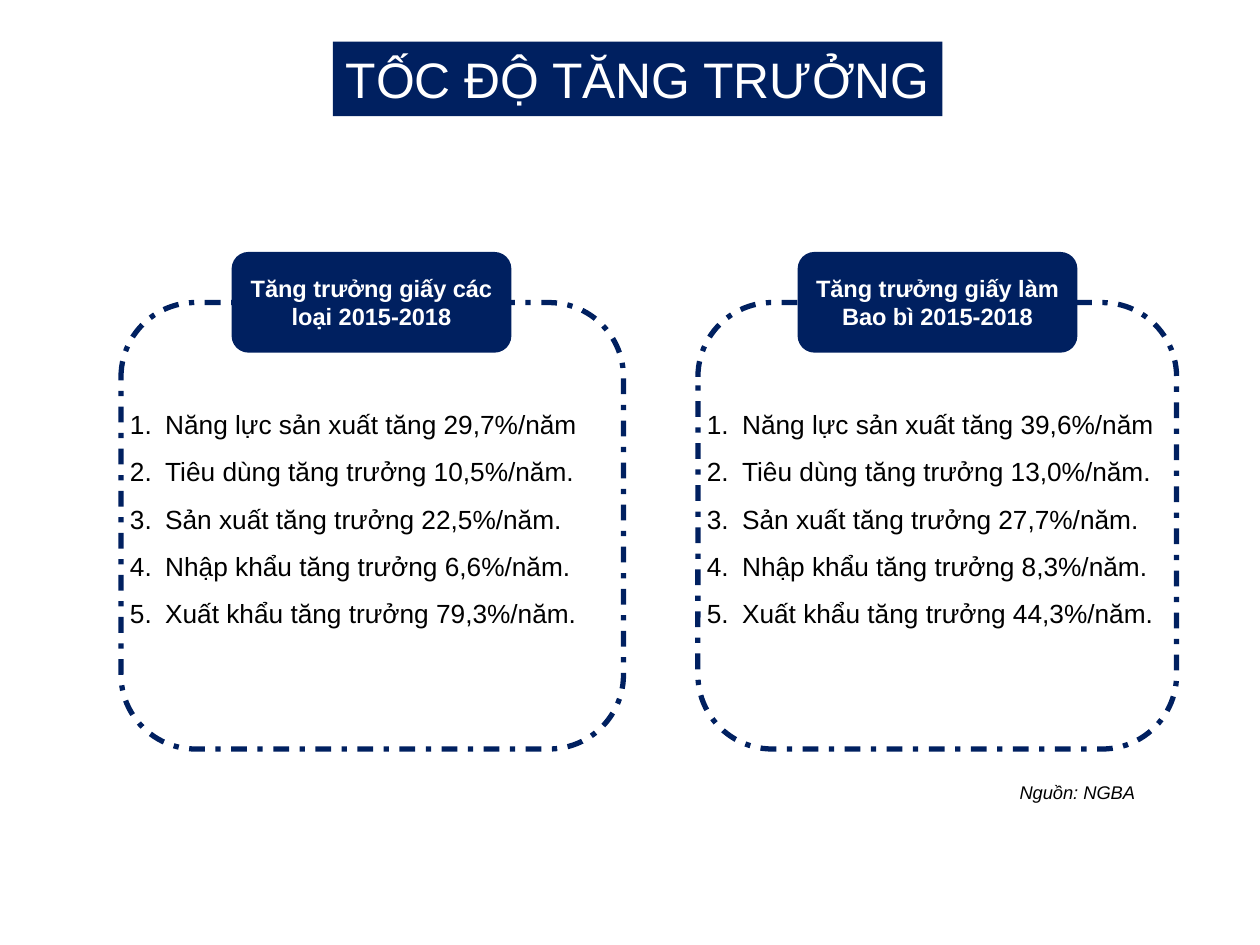
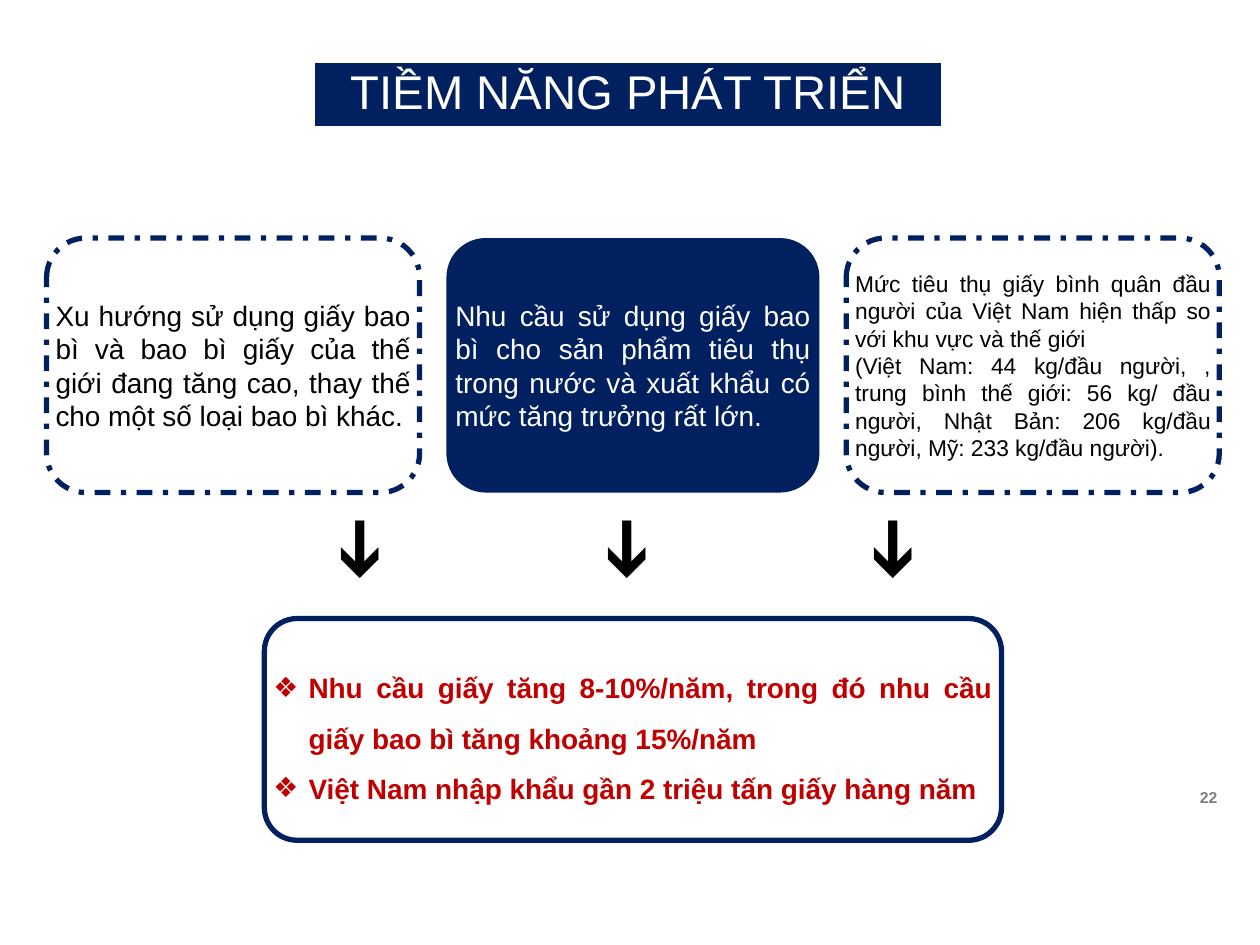
import pptx
import pptx.dml.color
import pptx.enum.shapes
import pptx.enum.text
import pptx.oxml
import pptx.util
from pptx.oxml.ns import nsdecls

Cm = pptx.util.Cm
Pt = pptx.util.Pt
Align = pptx.enum.text.PP_ALIGN
Anchor = pptx.enum.text.MSO_ANCHOR

NAVY, WHITE, BLACK, RED, GRAY = "002060", "FFFFFF", "000000", "C00000", "7F7F7F"
INDENT = Cm(0.71)
NUMBER = '<a:buAutoNum {} type="arabicPeriod"/>'
DIAMOND = '<a:buChar {} char="❖"/>'
DASHES = ('<a:custDash {}><a:ds d="300000" sp="200000"/>'
          '<a:ds d="100000" sp="200000"/></a:custDash>')


def color(code):
    return pptx.dml.color.RGBColor.from_string(code)


def xml(text):
    return pptx.oxml.parse_xml(text.format(nsdecls("a")))


def apply(target, values):
    for name, value in values.items():
        setattr(target, name, value)


def place(shape, box):
    names = ("left", "top", "width", "height")
    apply(shape, dict(zip(names, map(Cm, box))))


def write(shape, lines, size, ink, align=Align.LEFT, anchor=Anchor.MIDDLE,
          pad=(0.18, 0.1), space=1.0, bold=False, italic=False):
    """Fill the text frame, one paragraph for each line."""
    frame = shape.text_frame
    side, end = map(Cm, pad)
    apply(frame, {"word_wrap": True, "vertical_anchor": anchor,
                  "auto_size": pptx.enum.text.MSO_AUTO_SIZE.NONE,
                  "margin_left": side, "margin_right": side,
                  "margin_top": end, "margin_bottom": end})
    frame.text = "\n".join(lines)
    for para in frame.paragraphs:
        apply(para, {"alignment": align, "line_spacing": space,
                     "space_before": Pt(0)})
        font = para.runs[0].font
        apply(font, {"name": "Arial", "size": Pt(size),
                     "bold": bold, "italic": italic})
        font.color.rgb = color(ink)


def title(slide, text, box, size, **style):
    shape = slide.shapes.title
    place(shape, box)
    shape.fill.solid()
    shape.fill.fore_color.rgb = color(NAVY)
    write(shape, [text], size, WHITE, Align.CENTER, **style)


def bullets(shape, lines, box, size, ink, mark, **style):
    place(shape, box)
    write(shape, lines, size, ink, space=1.5, **style)
    for para in shape.text_frame.paragraphs:
        props = para._p.get_or_add_pPr()
        props.set("marL", str(INDENT))
        props.set("indent", str(-INDENT))
        props.append(xml(mark))


def panel(slide, box, radius, filled=False, dashed=False):
    kind = pptx.enum.shapes.MSO_SHAPE.ROUNDED_RECTANGLE
    shape = slide.shapes.add_shape(kind, *map(Cm, box))
    shape.adjustments[0] = radius / min(box[2:])
    shape.shadow.inherit = False
    if filled:
        shape.fill.solid()
        shape.fill.fore_color.rgb = color(NAVY)
        shape.line.fill.background()
        return shape
    shape.fill.background()
    shape.line.color.rgb = color(NAVY)
    shape.line.width = Pt(3)
    if dashed:
        shape.line._get_or_add_ln().append(xml(DASHES))
    return shape


def note(slide, lines, box, size, ink, turn=0, **style):
    shape = slide.shapes.add_textbox(*map(Cm, box))
    shape.rotation = turn
    write(shape, lines, size, ink, **style)


def growth(deck):
    slide = deck.slides.add_slide(deck.slide_layouts[3])
    title(slide, "TỐC ĐỘ TĂNG TRƯỞNG", (6.71, 0.84, 12.29, 1.5), 28.5, pad=(0, 0))
    topics = ("Năng lực sản xuất tăng {}%/năm", "Tiêu dùng tăng trưởng {}%/năm.",
              "Sản xuất tăng trưởng {}%/năm.", "Nhập khẩu tăng trưởng {}%/năm.",
              "Xuất khẩu tăng trưởng {}%/năm.")
    groups = (
        ("Tăng trưởng giấy các loại 2015-2018", 2.44, 10.13, 4.67,
         ("29,7", "10,5", "22,5", "6,6", "79,3")),
        ("Tăng trưởng giấy làm Bao bì 2015-2018", 14.07, 9.65, 16.08,
         ("39,6", "13,0", "27,7", "8,3", "44,3")),
    )
    for index, (head, left, width, tab, rates) in enumerate(groups, 1):
        lines = [topic.format(rate) for topic, rate in zip(topics, rates)]
        bullets(slide.placeholders[index], lines, (left, 6.1, width, 8.39),
                15, BLACK, NUMBER)
        panel(slide, (left, 6.1, width, 9), 1.5, dashed=True)
        label = panel(slide, (tab, 5.08, 5.64, 2.03), 0.34, filled=True)
        write(label, [head], 13.5, WHITE, Align.CENTER, pad=(0.08, 0), bold=True)
    note(slide, ["Nguồn: NGBA"], (18.19, 15.65, 7.06, 0.64), 10.5, BLACK,
         align=Align.CENTER, anchor=Anchor.TOP, italic=True)


def outlook(deck):
    slide = deck.slides.add_slide(deck.slide_layouts[1])
    title(slide, "TIỀM NĂNG PHÁT TRIỂN", (6.35, 1.27, 12.62, 1.27), 27, space=0.9)
    drivers = (
        (["Xu hướng sử dụng giấy bao bì và bao bì giấy của thế giới đang tăng "
          "cao, thay thế cho một số loại bao bì khác."], 16, False),
        (["Nhu cầu sử dụng giấy bao bì cho sản phẩm tiêu thụ trong nước và "
          "xuất khẩu có mức tăng trưởng rất lớn."], 16, True),
        (["Mức tiêu thụ giấy bình quân đầu người của Việt Nam hiện thấp so "
          "với khu vực và thế giới",
          "(Việt Nam: 44 kg/đầu người, , trung bình thế giới: 56 kg/ đầu "
          "người, Nhật Bản: 206 kg/đầu người, Mỹ: 233 kg/đầu người)."], 13, False),
    )
    for index, (lines, size, filled) in enumerate(drivers):
        box = (0.94 + 8.06 * index, 4.8, 7.52, 5.13)
        panel(slide, box, 0.79, filled, dashed=not filled)
        note(slide, lines, box, size, WHITE if filled else BLACK,
             align=Align.JUSTIFY)
        note(slide, ["➔"], (6.25 + 5.37 * index, 10.34, 2.31, 2.11), 45, BLACK,
             turn=90, anchor=Anchor.TOP)
    result = (5.33, 12.47, 14.86, 4.47)
    panel(slide, result, 0.66)
    bullets(slide.placeholders[1],
            ["Nhu cầu giấy tăng 8-10%/năm, trong đó nhu cầu giấy bao bì tăng "
             "khoảng 15%/năm",
             "Việt Nam nhập khẩu gần 2 triệu tấn giấy hàng năm"],
            result, 16, RED, DIAMOND, align=Align.JUSTIFY, bold=True)
    note(slide, ["22"], (18.72, 15.7, 6, 0.76), 9, GRAY,
         align=Align.RIGHT, bold=True)


def main():
    deck = pptx.Presentation()
    apply(deck, {"slide_width": Cm(25.4), "slide_height": Cm(19.05)})
    growth(deck)
    outlook(deck)
    deck.save("out.pptx")


if __name__ == "__main__":
    main()
